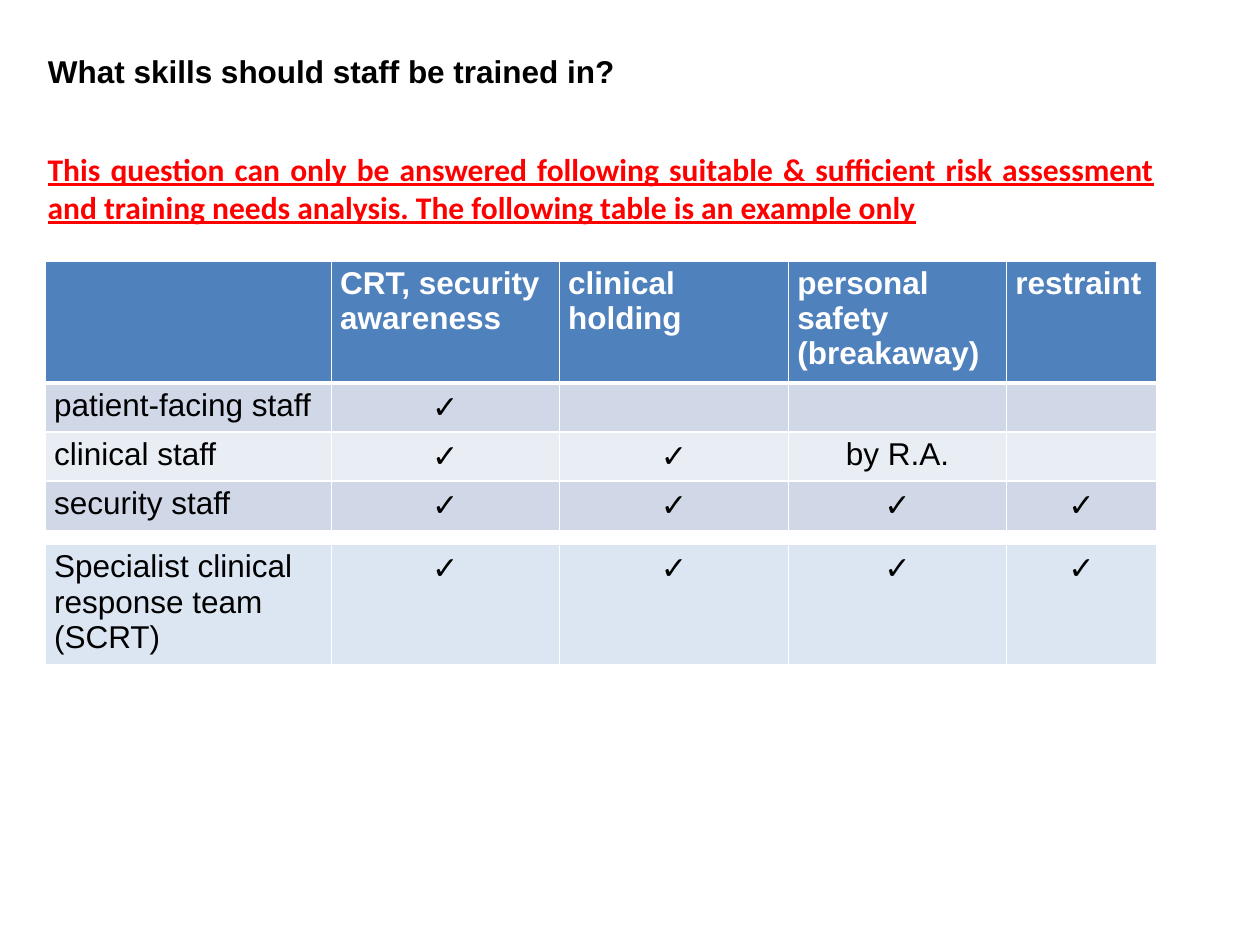
from dataclasses import dataclass

from lxml import etree
from pptx import Presentation
from pptx.dml.color import RGBColor
from pptx.enum.text import MSO_ANCHOR, MSO_AUTO_SIZE, PP_ALIGN
from pptx.oxml.ns import qn
from pptx.util import Inches, Pt

LEFT, CENTER, JUSTIFY = PP_ALIGN.LEFT, PP_ALIGN.CENTER, PP_ALIGN.JUSTIFY
TOP = MSO_ANCHOR.TOP
NO_AUTOFIT = MSO_AUTO_SIZE.NONE


@dataclass(frozen=True)
class Theme:
    text: str = "000000"
    warning: str = "FF0000"
    header_text: str = "FFFFFF"
    header_fill: str = "4F81BD"
    band_dark: str = "D0D8E8"
    band_light: str = "E9EDF4"
    specialist_fill: str = "DCE6F2"
    border: str = "FFFFFF"
    size: int = 18
    body_font: str = "Arial"
    accent_font: str = "Calibri"


THEME = Theme()
TICK = "✓"
COLUMN_WIDTHS = (2.27, 1.81, 1.82, 1.73, 1.19)
TABLE_LEFT = 0.36
THIN, THICK = 1, 3

SKILLS = [
    ("", "CRT, security awareness", "clinical holding",
     "personal safety (breakaway)", "restraint"),
    ("patient-facing staff", TICK, "", "", ""),
    ("clinical staff", TICK, TICK, "by R.A.", ""),
    ("security staff", TICK, TICK, TICK, TICK),
]
SPECIALIST_TEAM = [
    ("Specialist clinical response team (SCRT)", TICK, TICK, TICK, TICK),
]


def write(frame, text, color, font=THEME.body_font, align=LEFT, **styles):
    paragraph = frame.paragraphs[0]
    paragraph.alignment = align
    run = paragraph.add_run()
    run.text = text
    run.font.color.rgb = RGBColor.from_string(color)
    formats = {"name": font, "size": Pt(THEME.size), "bold": False, **styles}
    for attribute, value in formats.items():
        setattr(run.font, attribute, value)


def format_frame(frame):
    formats = {"word_wrap": True, "auto_size": NO_AUTOFIT, "vertical_anchor": TOP,
               "margin_left": Inches(0.1), "margin_right": Inches(0.1),
               "margin_top": Inches(0.05), "margin_bottom": Inches(0.05)}
    for attribute, value in formats.items():
        setattr(frame, attribute, value)


def add_heading(slide):
    heading = slide.shapes.title
    heading.left, heading.top = Inches(0.28), Inches(0.36)
    heading.width, heading.height = Inches(8.98), Inches(0.45)
    format_frame(heading.text_frame)
    write(heading.text_frame, "What skills should staff be trained in?",
          THEME.text, align=JUSTIFY, bold=True)


def add_warning(slide):
    warning = slide.shapes.add_textbox(
        Inches(0.28), Inches(1.14), Inches(8.98), Inches(0.7))
    format_frame(warning.text_frame)
    write(warning.text_frame,
          "This question can only be answered following suitable & sufficient "
          "risk assessment and training needs analysis. "
          "The following table is an example only",
          THEME.warning, THEME.accent_font, JUSTIFY, bold=True, underline=True)


def set_borders(cell, top, bottom):
    properties = cell._tc.get_or_add_tcPr()
    for side, width in (("L", THIN), ("R", THIN), ("T", top), ("B", bottom)):
        line = etree.SubElement(properties, qn(f"a:ln{side}"), w=str(Pt(width)))
        fill = etree.SubElement(line, qn("a:solidFill"))
        etree.SubElement(fill, qn("a:srgbClr"), val=THEME.border)


def fill_cell(cell, text, fill, is_header, is_label):
    for side, inset in (("left", 0.07), ("right", 0.07), ("top", 0.04), ("bottom", 0.04)):
        setattr(cell, f"margin_{side}", Inches(inset))
    cell.fill.solid()
    cell.fill.fore_color.rgb = RGBColor.from_string(fill)
    if text:
        write(cell.text_frame, text,
              THEME.header_text if is_header else THEME.text,
              THEME.accent_font if text == TICK else THEME.body_font,
              LEFT if is_header or is_label else CENTER, bold=is_header)


def add_skill_table(slide, top, rows, heights, fills, bottoms, has_header=False):
    """bottoms holds the line width in points under each row."""
    table = slide.shapes.add_table(
        len(rows), len(COLUMN_WIDTHS), Inches(TABLE_LEFT), Inches(top),
        Inches(sum(COLUMN_WIDTHS)), Inches(sum(heights))).table
    table.first_row = has_header
    table.horz_banding = False
    for column, width in zip(table.columns, COLUMN_WIDTHS):
        column.width = Inches(width)
    tops = [THIN, *bottoms]
    for r, texts in enumerate(rows):
        table.rows[r].height = Inches(heights[r])
        for c, text in enumerate(texts):
            cell = table.cell(r, c)
            set_borders(cell, tops[r], bottoms[r])
            fill_cell(cell, text, fills[r], has_header and r == 0, c == 0)


def main():
    presentation = Presentation()
    presentation.slide_width, presentation.slide_height = Inches(10), Inches(7.5)
    slide = presentation.slides.add_slide(presentation.slide_layouts[5])
    add_heading(slide)
    add_warning(slide)
    add_skill_table(
        slide, 2.07, SKILLS, [0.97] + [0.39] * 3,
        [THEME.header_fill, THEME.band_dark, THEME.band_light, THEME.band_dark],
        [THICK] + [THIN] * 3, has_header=True)
    add_skill_table(slide, 4.32, SPECIALIST_TEAM, [0.97],
                    [THEME.specialist_fill], [THICK])
    presentation.save("out.pptx")


if __name__ == "__main__":
    main()
